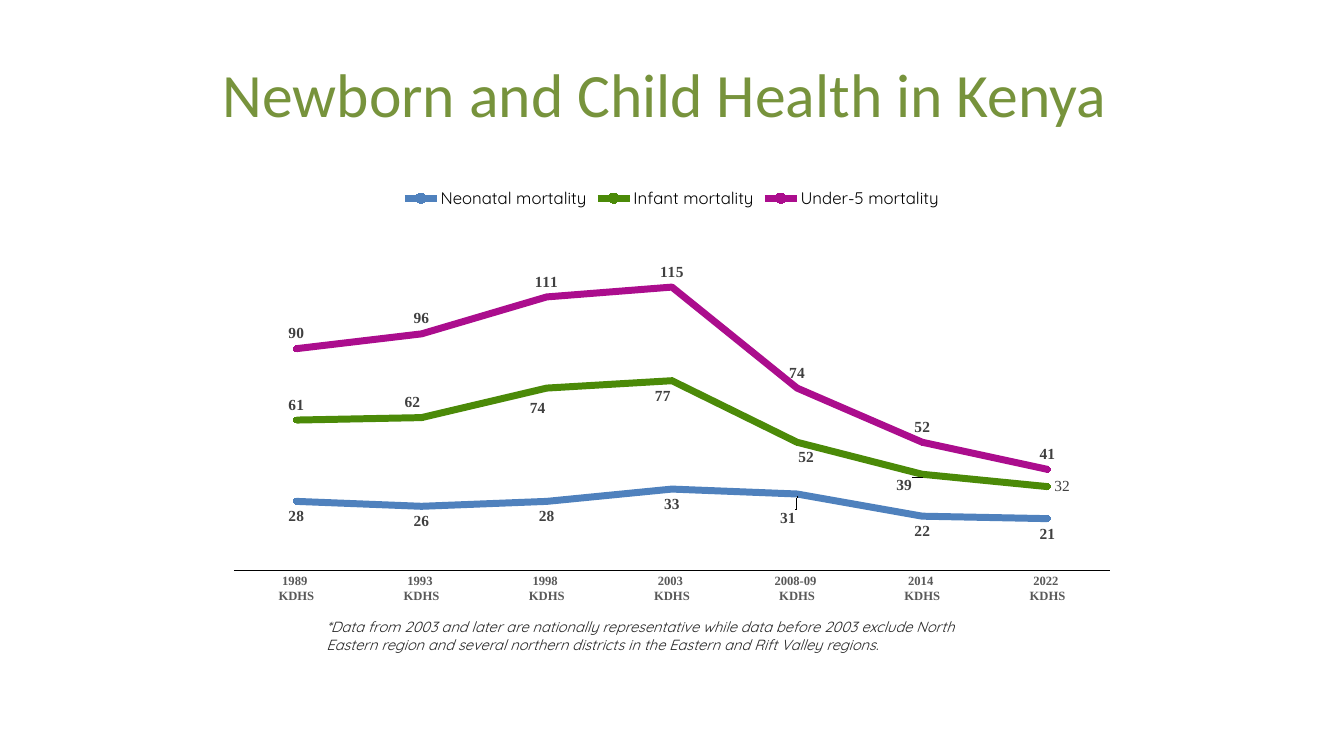
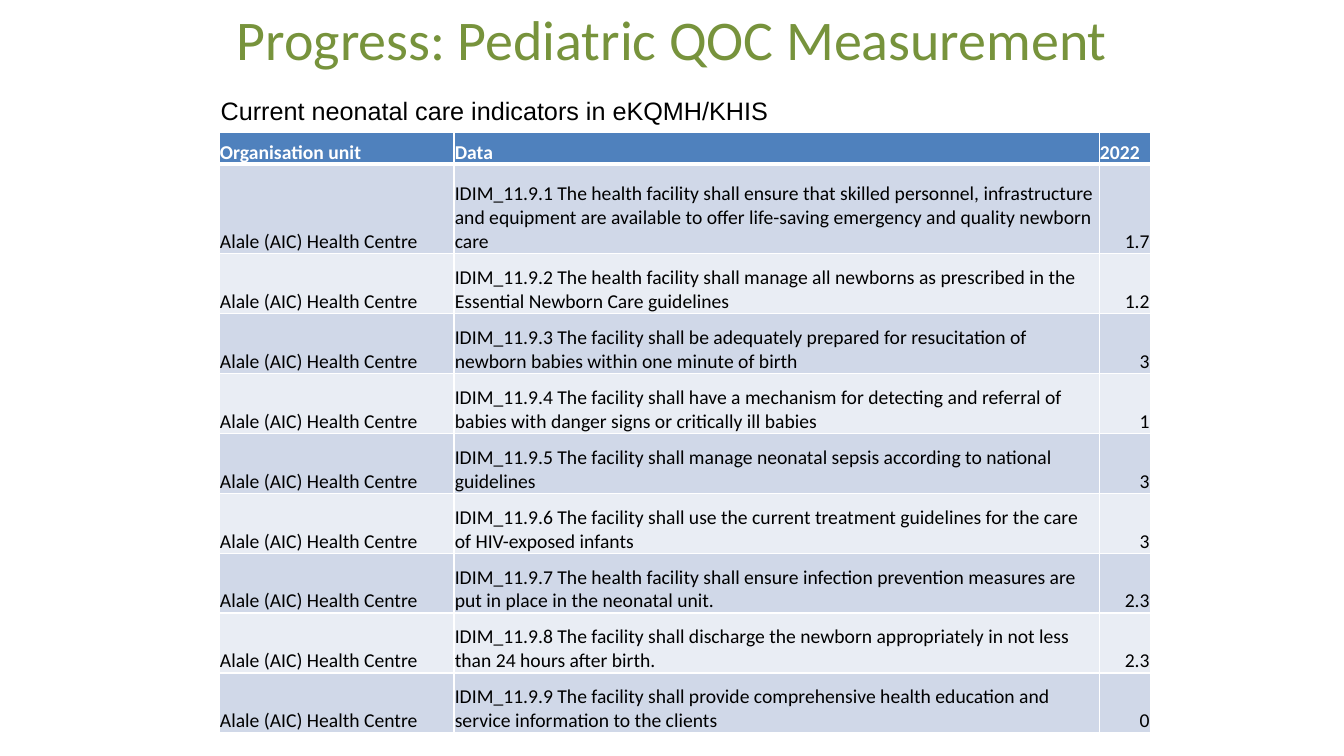
"""Build two slides on newborn and child health: a mortality chart and an indicator table."""
from lxml.etree import SubElement
from pptx import Presentation
from pptx.chart.data import CategoryChartData
from pptx.dml.color import RGBColor
from pptx.enum.chart import XL_CHART_TYPE, XL_LEGEND_POSITION, XL_MARKER_STYLE, XL_TICK_MARK
from pptx.enum.chart import XL_LABEL_POSITION as LabelPosition
from pptx.enum.text import MSO_ANCHOR, MSO_AUTO_SIZE, PP_ALIGN
from pptx.oxml.ns import qn
from pptx.util import Pt

COLORS = {
    "title": "77933C", "black": "000000", "white": "FFFFFF", "note": "242424",
    "axis_text": "595959", "label": "404040",
    "neonatal": "4F81BD", "infant": "4B8A08", "under_5": "AB0D8D",
    "header": "4F81BD", "band_dark": "D0D8E8", "band_light": "E9EDF4",
}
SERIF, SANS, ROUND, PLAIN = "Times New Roman", "Calibri", "Quicksand", "Arial"
ABOVE, BELOW, RIGHT = LabelPosition.ABOVE, LabelPosition.BELOW, LabelPosition.RIGHT

SURVEYS = ["1989", "1993", "1998", "2003", "2008-09", "2014", "2022"]
MORTALITY = [
    ("Neonatal mortality", "neonatal", [28, 26, 28, 33, 31, 22, 21], BELOW),
    ("Infant mortality", "infant", [61, 62, 74, 77, 52, 39, 34], ABOVE),
    ("Under-5 mortality", "under_5", [90, 96, 111, 115, 74, 52, 41], ABOVE),
]
MOVED_LABELS = {
    "neonatal": [(4, BELOW, -0.01, 0.02)],
    "infant": [(1, ABOVE, -0.01, 0), (2, BELOW, -0.01, 0.01), (3, BELOW, -0.01, 0),
               (4, BELOW, 0.01, 0), (5, BELOW, -0.02, -0.01)],
}
FOOTNOTE = ("*Data from 2003 and later are nationally representative while data before 2003 "
            "exclude North Eastern region and several northern districts in the Eastern and "
            "Rift Valley regions.")

FACILITY = "Alale (AIC) Health Centre"
HEADINGS = ("Organisation unit", "Data", "2022")
INDICATORS = [
    ("The health facility shall ensure that skilled personnel, infrastructure and equipment are "
     "available to offer life-saving emergency and quality newborn care", "1.7"),
    ("The health facility shall manage all newborns as prescribed in the Essential Newborn Care "
     "guidelines", "1.2"),
    ("The facility shall be adequately prepared for resucitation of newborn babies within one "
     "minute of birth", "3"),
    ("The facility shall have a mechanism for detecting and referral of babies with danger signs "
     "or critically ill babies", "1"),
    ("The facility shall manage neonatal sepsis according to national guidelines", "3"),
    ("The facility shall use the current treatment guidelines for the care of HIV-exposed "
     "infants", "3"),
    ("The health facility shall ensure infection prevention measures are put in place in the "
     "neonatal unit.", "2.3"),
    ("The facility shall discharge the newborn appropriately in not less than 24 hours after "
     "birth.", "2.3"),
    ("The facility shall provide comprehensive health education and service information to the "
     "clients", "0"),
]
COLUMN_WIDTHS = [167.8, 460.8, 36.7]
ROW_HEIGHTS = [23, 64] + [42.8] * 8


def rgb(name):
    return RGBColor.from_string(COLORS[name])


def style_font(font, name, size, color, bold=False, italic=False):
    font.name, font.size, font.bold, font.italic = name, Pt(size), bold, italic
    font.color.rgb = rgb(color)


def add_run(paragraph, text, *style, **emphasis):
    run = paragraph.add_run()
    run.text = text
    style_font(run.font, *style, **emphasis)


def add_titled_slide(presentation, text, size, box):
    slide = presentation.slides.add_slide(presentation.slide_layouts[5])
    title = slide.shapes.title
    title.left, title.top, title.width, title.height = map(Pt, box)
    frame = title.text_frame
    frame.auto_size = MSO_AUTO_SIZE.NONE
    frame.vertical_anchor = MSO_ANCHOR.MIDDLE
    frame.paragraphs[0].alignment = PP_ALIGN.CENTER
    add_run(frame.paragraphs[0], text, SANS, size, "title")
    return slide


def add_text(slide, text, box, wrap, *style, **emphasis):
    frame = slide.shapes.add_textbox(*map(Pt, box)).text_frame
    frame.word_wrap = wrap
    add_run(frame.paragraphs[0], text, *style, **emphasis)


def set_layout(parent, index, values):
    for old_layout in parent.findall(qn("c:layout")):
        parent.remove(old_layout)
    layout = SubElement(parent, qn("c:layout"))
    manual = SubElement(layout, qn("c:manualLayout"))
    for tag, value in values.items():
        SubElement(manual, qn(f"c:{tag}")).set("val", str(value))
    parent.insert(index, layout)


def style_series(series, color, position):
    series.smooth = False
    series.format.line.color.rgb = rgb(color)
    series.format.line.width = Pt(5)
    marker = series.marker
    marker.style, marker.size = XL_MARKER_STYLE.CIRCLE, 4
    marker.format.fill.solid()
    marker.format.fill.fore_color.rgb = rgb(color)
    marker.format.line.color.rgb = rgb(color)
    labels = series.data_labels
    labels.show_value, labels.position = True, position
    style_font(labels.font, SERIF, 11, "label", bold=True)
    for index, side, shift_x, shift_y in MOVED_LABELS.get(color, []):
        label = series.points[index].data_label
        style_font(label.font, SERIF, 11, "label", bold=True)
        label.position = side
        element = next(item for item in labels._element.findall(qn("c:dLbl"))
                       if item.find(qn("c:idx")).get("val") == str(index))
        set_layout(element, 1, {"x": shift_x, "y": shift_y})


def add_mortality_chart(slide):
    data = CategoryChartData()
    data.categories = [f"{survey} \nKDHS" for survey in SURVEYS]
    for name, _, values, _ in MORTALITY:
        data.add_series(name, values)
    chart = slide.shapes.add_chart(
        XL_CHART_TYPE.LINE_MARKERS, Pt(156), Pt(126), Pt(648), Pt(330), data).chart
    chart.has_title = False
    style_font(chart.font, ROUND, 18, "black")
    chart.has_legend = True
    chart.legend.position = XL_LEGEND_POSITION.TOP
    chart.legend.include_in_layout = False
    style_font(chart.legend.font, ROUND, 12, "black")

    value_axis, category_axis = chart.value_axis, chart.category_axis
    value_axis.minimum_scale, value_axis.maximum_scale = 0, 150
    value_axis.has_major_gridlines = value_axis.visible = False
    category_axis.major_tick_mark = category_axis.minor_tick_mark = XL_TICK_MARK.NONE
    category_axis.format.line.color.rgb = rgb("black")
    category_axis.format.line.width = Pt(0.75)
    style_font(category_axis.tick_labels.font, SERIF, 9, "axis_text", bold=True)

    plot = chart.plots[0]
    plot.vary_by_categories = False
    for series, (_, color, _, position) in zip(plot.series, MORTALITY):
        style_series(series, color, position)
    last_infant = plot.series[1].points[6].data_label
    add_run(last_infant.text_frame.paragraphs[0], "32", SERIF, 11, "label")
    last_infant.position = RIGHT
    set_layout(chart._chartSpace.chart.plotArea, 0, {
        "layoutTarget": "inner", "xMode": "edge", "yMode": "edge",
        "x": 0.017, "y": 0.053, "w": 0.966, "h": 0.8})


def set_borders(cell, bottom_width):
    properties = cell._tc.get_or_add_tcPr()
    widths = {"lnL": 1, "lnR": 1, "lnT": 1, "lnB": bottom_width}
    for index, (tag, width) in enumerate(widths.items()):
        line = SubElement(properties, qn(f"a:{tag}"), w=str(Pt(width)))
        fill = SubElement(line, qn("a:solidFill"))
        SubElement(fill, qn("a:srgbClr"), val=COLORS["white"])
        properties.insert(index, line)


def add_indicator_table(slide):
    rows = [HEADINGS] + [(FACILITY, f"IDIM_11.9.{number} {text}", score)
                         for number, (text, score) in enumerate(INDICATORS, 1)]
    table = slide.shapes.add_table(
        len(rows), len(HEADINGS), Pt(156.5), Pt(94.3),
        Pt(sum(COLUMN_WIDTHS)), Pt(sum(ROW_HEIGHTS))).table
    table.horz_banding = False
    for column, width in zip(table.columns, COLUMN_WIDTHS):
        column.width = Pt(width)
    for row_index, (row, height) in enumerate(zip(rows, ROW_HEIGHTS)):
        table.rows[row_index].height = Pt(height)
        is_header = row_index == 0
        band = "header" if is_header else ("band_light", "band_dark")[row_index % 2]
        for column_index, text in enumerate(row):
            cell = table.cell(row_index, column_index)
            cell.margin_left = cell.margin_right = cell.margin_top = Pt(0.6)
            cell.margin_bottom = 0
            cell.vertical_anchor = MSO_ANCHOR.BOTTOM
            cell.fill.solid()
            cell.fill.fore_color.rgb = rgb(band)
            set_borders(cell, 3 if is_header or row_index == 0 else 1)
            paragraph = cell.text_frame.paragraphs[0]
            if column_index == 2 and not is_header:
                paragraph.alignment = PP_ALIGN.RIGHT
            add_run(paragraph, text, SANS, 14, "white" if is_header else "black", bold=is_header)


def main():
    presentation = Presentation()
    presentation.slide_width, presentation.slide_height = Pt(960), Pt(540)

    slide = add_titled_slide(
        presentation, "Newborn and Child Health in Kenya ", 44, (48, 21.6, 864, 90))
    add_mortality_chart(slide)
    add_text(slide, FOOTNOTE, (226, 437.8, 495.4, 32.4), True, ROUND, 10.5, "note", italic=True)

    slide = add_titled_slide(
        presentation, "Progress: Pediatric QOC Measurement", 40, (156, 6, 648, 42))
    add_indicator_table(slide)
    add_text(slide, "Current neonatal care indicators in eKQMH/KHIS",
             (150.5, 64.4, 409.7, 28.8), False, PLAIN, 18, "black")

    presentation.save("out.pptx")


if __name__ == "__main__":
    main()
